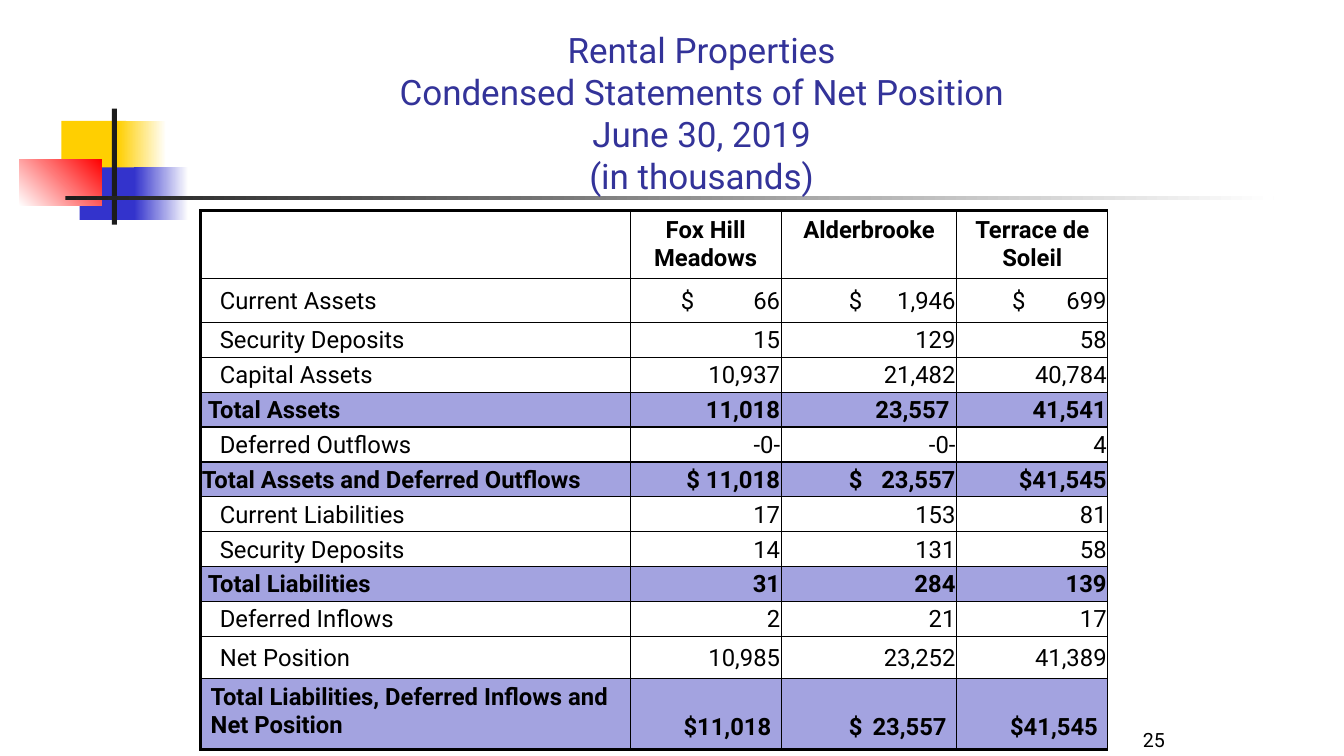
import pptx
import pptx.dml.color
import pptx.enum.shapes
import pptx.enum.text
import pptx.oxml
import pptx.oxml.ns
import pptx.util

Cm = pptx.util.Cm
Pt = pptx.util.Pt
ALIGN = pptx.enum.text.PP_ALIGN
ANCHOR = pptx.enum.text.MSO_ANCHOR
COLORS = {
    "white": "FFFFFF", "black": "000000", "ink": "1C1C1C", "title": "333399",
    "yellow": "FFCF01", "blue": "3333CC", "red": "FF0000", "total": "A3A3E0",
}
COLUMN_WIDTHS = [10.82, 3.81, 4.42, 3.81]
ROW_HEIGHTS = [1.68, 1.11] + [0.88] * 9 + [1.05, 1.8]
DOLLAR_OFFSETS = [0, 1.28, 1.7, 1.4]
HEADINGS = ["", "Fox Hill Meadows", "Alderbrooke", "Terrace de Soleil"]
ITEM_INDENT, TOTAL_INDENT, EDGE, PADDING = 0.48, 0.18, 0.03, 0.25
STATEMENT = [
    ("Current Assets", ITEM_INDENT, "$\t66", "$\t1,946", "$\t699"),
    ("Security Deposits", ITEM_INDENT, "15", "129", "58"),
    ("Capital Assets", ITEM_INDENT, "10,937", "21,482", "40,784"),
    ("Total Assets", TOTAL_INDENT, "11,018", "23,557", "41,541"),
    ("Deferred Outflows", ITEM_INDENT, "-0-", "-0-", "4"),
    ("Total Assets and Deferred Outflows", EDGE, "$ 11,018", "$\t23,557", "$41,545"),
    ("Current Liabilities", ITEM_INDENT, "17", "153", "81"),
    ("Security Deposits", ITEM_INDENT, "14", "131", "58"),
    ("Total Liabilities", TOTAL_INDENT, "31", "284", "139"),
    ("Deferred Inflows", ITEM_INDENT, "2", "21", "17"),
    ("Net Position", ITEM_INDENT, "10,985", "23,252", "41,389"),
    ("Total Liabilities, Deferred Inflows and Net Position", PADDING,
     "$11,018", "$\t23,557", "$41,545"),
]


class StatementSlide:
    font_name = "Roboto"

    def __init__(self, presentation):
        self.slide = presentation.slides.add_slide(presentation.slide_layouts[6])

    def color(self, name):
        return pptx.dml.color.RGBColor.from_string(COLORS[name])

    def style(self, paragraph, size, color="black", bold=False, align=ALIGN.LEFT):
        paragraph.alignment = align
        paragraph.font.name = self.font_name
        paragraph.font.size = Pt(size)
        paragraph.font.bold = bold
        paragraph.font.color.rgb = self.color(color)

    def block(self, left, top, width, height, start, end=None, angle=0):
        shape = self.slide.shapes.add_shape(
            pptx.enum.shapes.MSO_SHAPE.RECTANGLE, Cm(left), Cm(top), Cm(width), Cm(height))
        shape.shadow.inherit = False
        shape.line.fill.background()
        if end is None:
            shape.fill.solid()
            shape.fill.fore_color.rgb = self.color(start)
            return
        shape.fill.gradient()
        shape.fill.gradient_angle = angle
        for stop, name in zip(shape.fill.gradient_stops, (start, end)):
            stop.color.rgb = self.color(name)

    def text(self, content, left, top, width, height, size, color, align):
        box = self.slide.shapes.add_textbox(Cm(left), Cm(top), Cm(width), Cm(height))
        frame = box.text_frame
        frame.word_wrap = True
        frame.vertical_anchor = ANCHOR.BOTTOM
        frame.paragraphs[0].text = content
        self.style(frame.paragraphs[0], size, color, align=align)

    def table(self, left, top, widths, heights):
        table = self.slide.shapes.add_table(
            len(heights), len(widths), Cm(left), Cm(top),
            Cm(sum(widths)), Cm(sum(heights))).table
        table.first_row = table.horz_banding = False
        for column, width in zip(table.columns, widths):
            column.width = Cm(width)
        for row, height in zip(table.rows, heights):
            row.height = Cm(height)
        return table

    def borders(self, cell, **widths):
        properties = cell._tc.get_or_add_tcPr()
        for position, side in enumerate("LRTB"):
            properties.insert(position, pptx.oxml.parse_xml(
                f'<a:ln{side} {pptx.oxml.ns.nsdecls("a")} w="{Pt(widths[side])}">'
                f'<a:solidFill><a:srgbClr val="{COLORS["black"]}"/></a:solidFill>'
                f'</a:ln{side}>'))

    def right_tab(self, paragraph, position):
        paragraph._p.get_or_add_pPr().insert(0, pptx.oxml.parse_xml(
            f'<a:tabLst {pptx.oxml.ns.nsdecls("a")}>'
            f'<a:tab pos="{Cm(position)}" algn="r"/></a:tabLst>'))

    def cell(self, cell, content, bold, align, anchor, margins, fill=None):
        if fill:
            cell.fill.solid()
            cell.fill.fore_color.rgb = self.color(fill)
        else:
            cell.fill.background()
        cell.vertical_anchor = anchor
        (cell.margin_left, cell.margin_right,
         cell.margin_top, cell.margin_bottom) = map(Cm, margins)
        paragraph = cell.text_frame.paragraphs[0]
        paragraph.text = content
        self.style(paragraph, 17, bold=bold, align=align)
        return paragraph


def fill_statement(page):
    table = page.table(5.06, 5.31, COLUMN_WIDTHS, ROW_HEIGHTS)
    last_row = len(STATEMENT)
    for column, heading in enumerate(HEADINGS):
        page.cell(table.cell(0, column), heading, True, ALIGN.CENTER, ANCHOR.TOP,
                  (PADDING, PADDING, 0.13, 0.13))
    for row, (label, indent, *amounts) in enumerate(STATEMENT, 1):
        total = label.startswith("Total")
        fill = "total" if total else None
        closing = row == last_row
        edge = PADDING if closing else EDGE
        vertical = (0.13, 0.2) if closing else (EDGE, 0)
        page.cell(table.cell(row, 0), label, total, ALIGN.LEFT,
                  ANCHOR.TOP if closing else ANCHOR.MIDDLE,
                  (indent, edge, *vertical), fill)
        for column, amount in enumerate(amounts, 1):
            tabbed = "\t" in amount
            offset = DOLLAR_OFFSETS[column] if tabbed else edge
            right = TOTAL_INDENT if (label, column) == ("Total Assets", 2) else edge
            paragraph = page.cell(
                table.cell(row, column), amount, total,
                ALIGN.LEFT if tabbed else ALIGN.RIGHT,
                ANCHOR.BOTTOM if closing else ANCHOR.MIDDLE,
                (offset, 0 if tabbed else right, *vertical), fill)
            if tabbed:
                page.right_tab(paragraph, COLUMN_WIDTHS[column] - offset - right)
    for row in range(last_row + 1):
        for column in range(len(HEADINGS)):
            page.borders(table.cell(row, column), L=2.25 if column == 0 else 1, R=1,
                         T=2.25 if row == 0 else 1, B=2.25 if row == last_row else 1)


def main():
    presentation = pptx.Presentation()
    presentation.slide_width = Cm(33.87)
    presentation.slide_height = Cm(19.05)
    page = StatementSlide(presentation)
    page.block(1.55, 3.05, 1.63, 1.32, "yellow")
    page.block(2.97, 3.05, 1.22, 1.32, "yellow", "white")
    page.block(2.01, 4.22, 1.55, 1.32, "blue")
    page.block(3.38, 4.22, 1.37, 1.32, "blue", "white")
    page.block(0.48, 4.01, 2.08, 1.17, "white", "red", 45)
    page.block(2.82, 2.74, 0.13, 2.92, "ink")
    page.block(1.65, 4.95, 30.45, 0.08, "ink", "white")
    page.text("Rental Properties\vCondensed Statements of Net Position\v"
              "June 30, 2019\v(in thousands)",
              6.15, 0.58, 23.06, 4.5, 25, "title", ALIGN.CENTER)
    fill_statement(page)
    page.text("25", 24.33, 17.78, 5.28, 1.27, 14, "black", ALIGN.RIGHT)
    presentation.save("out.pptx")


if __name__ == "__main__":
    main()
